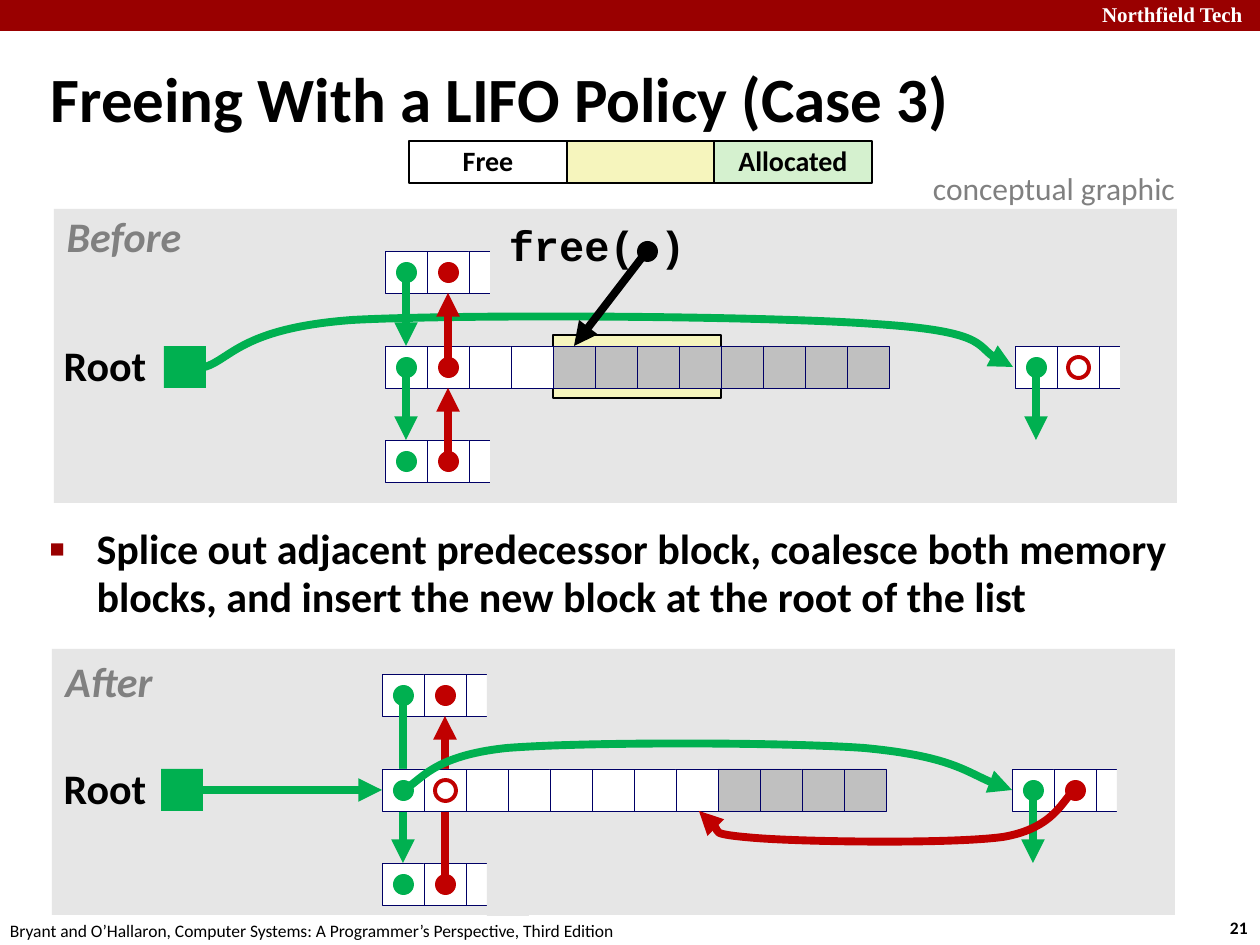
"""Build the slide on freeing with a LIFO policy, case 3."""
from dataclasses import dataclass

import lxml.etree
import pptx
import pptx.dml.color
import pptx.enum.shapes
import pptx.enum.text
import pptx.oxml.ns
import pptx.util

PX = 914400 / 126
CELL, DOT = 42, 21
COLORS = {
    "bar": "990000", "panel": "E6E6E6", "free": "FFFFFF", "used": "C0C0C0",
    "cell_line": "000066", "next": "00B050", "prev": "C00000", "black": "000000",
    "gray": "808080", "yellow": "F6F5BD", "allocated": "D5F1CF",
}
RECT = pptx.enum.shapes.MSO_SHAPE.RECTANGLE
OVAL = pptx.enum.shapes.MSO_SHAPE.OVAL
CENTER = pptx.enum.text.PP_ALIGN.CENTER
LEFT = pptx.enum.text.PP_ALIGN.LEFT
MIDDLE = pptx.enum.text.MSO_ANCHOR.MIDDLE
qn = pptx.oxml.ns.qn


@dataclass
class Box:
    x: int
    y: int
    w: int
    h: int


@dataclass
class Style:
    size: int
    color: str = "black"
    bold: bool = True
    italic: bool = False
    font: str = "Calibri"


@dataclass
class Label:
    text: str
    box: Box
    style: Style
    align: int = LEFT
    spacing: float = 1.0
    margin: int = 13
    wrap: bool = False


def px(n: float) -> int:
    return round(n * PX)


def rgb(name: str):
    return pptx.dml.color.RGBColor.from_string(COLORS[name])


def place(sp, box: Box) -> None:
    sp.left, sp.top, sp.width, sp.height = map(px, (box.x, box.y, box.w, box.h))


def format_text(tf, style: Style, align, spacing: float) -> None:
    p = tf.paragraphs[0]
    p.alignment, p.line_spacing = align, spacing
    f = p.runs[0].font
    f.size, f.name = pptx.util.Pt(style.size), style.font
    f.bold, f.italic = style.bold, style.italic
    f.color.rgb = rgb(style.color)


def add_label(s, label: Label) -> None:
    b = label.box
    tf = s.shapes.add_textbox(px(b.x), px(b.y), px(b.w), px(b.h)).text_frame
    tf.text = label.text
    tf.word_wrap = label.wrap
    tf.auto_size = pptx.enum.text.MSO_AUTO_SIZE.SHAPE_TO_FIT_TEXT
    tf.margin_left = tf.margin_right = px(label.margin)
    tf.margin_top = tf.margin_bottom = px(6)
    format_text(tf, label.style, label.align, label.spacing)


def add_shape(s, kind, box: Box, fill=None, line=None, width: float = 1):
    sp = s.shapes.add_shape(kind, px(box.x), px(box.y), px(box.w), px(box.h))
    sp.shadow.inherit = False
    if fill:
        sp.fill.solid()
        sp.fill.fore_color.rgb = rgb(fill)
    else:
        sp.fill.background()
    if line:
        sp.line.color.rgb = rgb(line)
        sp.line.width = pptx.util.Pt(width)
    else:
        sp.line.fill.background()
    return sp


def add_legend(s, x: int, fill: str, text: str = "") -> None:
    sp = add_shape(s, RECT, Box(x, 141, 158, CELL), fill, "black")
    if text:
        tf = sp.text_frame
        tf.text = text
        tf.word_wrap, tf.vertical_anchor = False, MIDDLE
        format_text(tf, Style(16), CENTER, 0.98)


def add_row(s, x: int, y: int, fills: list) -> list:
    return [add_shape(s, RECT, Box(x + i * CELL, y, CELL, CELL), fill, "cell_line", 0.25)
            for i, fill in enumerate(fills)]


def add_cut_block(s, x: int, y: int) -> list:
    cells = add_row(s, x, y, ["free"] * 3)
    add_shape(s, RECT, Box(x + 105, y - 10, CELL, 63), "panel")
    return cells


def add_dot(s, x: int, y: int, color: str, hollow: bool = False) -> None:
    box = Box(x + 11, y + 11, DOT, DOT)
    if hollow:
        add_shape(s, OVAL, box, None, color, 2.25)
    else:
        add_shape(s, OVAL, box, color)


def style_arrow(sp, color: str) -> None:
    sp.line.color.rgb = rgb(color)
    sp.line.width = pptx.util.Pt(4.5)
    ln = sp.element.spPr.find(qn("a:ln"))
    lxml.etree.SubElement(ln, qn("a:tailEnd"), type="triangle")


def add_arrow(s, start: tuple, end: tuple, color: str, target=None, side: int = 0) -> None:
    c = s.shapes.add_connector(pptx.enum.shapes.MSO_CONNECTOR.STRAIGHT,
                               *map(px, (*start, *end)))
    if target is not None:
        c.end_connect(target, side)
    style_arrow(c, color)
    lxml.etree.SubElement(c.element.spPr, qn("a:effectLst"))


def add_curve(s, points: list, color: str) -> None:
    fb = s.shapes.build_freeform(*points[0], scale=PX)
    fb.add_line_segments(points[1:], close=False)
    sp = fb.convert_to_shape()
    sp.shadow.inherit = False
    sp.fill.background()
    style_arrow(sp, color)
    segments = list(sp.element.iter(qn("a:lnTo")))
    outline = segments[0].getparent()
    for i in range(0, len(segments), 3):
        curve = lxml.etree.SubElement(outline, qn("a:cubicBezTo"))
        for segment in segments[i:i + 3]:
            curve.append(segment[0])
            outline.remove(segment)


def add_placeholders(s) -> None:
    title, body = s.shapes.title, s.placeholders[1]
    place(title, Box(38, 49, 1201, 108))
    place(body, Box(37, 520, 1145, 108))
    title.text_frame.text = "Freeing With a LIFO Policy (Case 3)"
    body.text_frame.text = ("Splice out adjacent predecessor block, coalesce both memory "
                            "blocks, and insert the new block at the root of the list")
    for sp, size, spacing in ((title, 36, 0.87), (body, 24, 0.95)):
        sp.text_frame.auto_size = pptx.enum.text.MSO_AUTO_SIZE.NONE
        format_text(sp.text_frame, Style(size), LEFT, spacing)
    title.text_frame.vertical_anchor = MIDDLE
    pPr = body.text_frame.paragraphs[0]._p.get_or_add_pPr()
    pPr.set("marL", str(px(47)))
    pPr.set("indent", str(-px(47)))
    clr = lxml.etree.SubElement(pPr, qn("a:buClr"))
    lxml.etree.SubElement(clr, qn("a:srgbClr"), val=COLORS["bar"])
    lxml.etree.SubElement(pPr, qn("a:buSzPct"), val="60000")
    lxml.etree.SubElement(pPr, qn("a:buChar"), char="■")


def add_before(s) -> None:
    x, right, top, mid, low = 385, 1015, 251, 346, 440
    add_shape(s, RECT, Box(54, 209, 1123, 294), "panel")
    add_shape(s, RECT, Box(553, 335, 168, 63), "yellow", "black", 0.75)
    add_curve(s, [(205, 367), (231, 359), (242, 328), (353, 320), (465, 314), (764, 316),
                  (874, 324), (984, 331), (984, 358), (1013, 367)], "next")
    row = add_row(s, x, mid, ["free"] * 4 + ["used"] * 8)
    upper, lower = add_cut_block(s, x, top), add_cut_block(s, x, low)
    add_cut_block(s, right, mid)
    add_shape(s, RECT, Box(164, mid, CELL, CELL), "next")
    for y in (top, mid, low):
        add_dot(s, x, y, "next")
        add_dot(s, x + CELL, y, "prev")
    for y, cells in ((top, row), (mid, lower)):
        add_arrow(s, (x + 21, y + 21), (x + 21, y + 95), "next", cells[0], 0)
    for y, cells in ((low, row), (mid, upper)):
        add_arrow(s, (x + 63, y + 21), (x + 63, y - 53), "prev", cells[1], 2)
    add_dot(s, right, mid, "next")
    add_arrow(s, (right + 21, mid + 21), (right + 21, low), "next")
    add_dot(s, right + CELL, mid, "prev", hollow=True)
    add_label(s, Label("free( )", Box(502, 219, 190, 59),
                       Style(24, font="Courier New"), CENTER, 0.9, 6))
    add_dot(s, 626, 230, "black")
    add_arrow(s, (647, 251), (574, mid), "black", row[4], 0)


def add_after(s) -> None:
    x, right, top, mid, low = 382, 1012, 674, 769, 863
    add_shape(s, RECT, Box(52, 649, 1123, 266), "panel")
    upper, lower = add_cut_block(s, x, top), add_cut_block(s, x, low)
    add_arrow(s, (x + 63, low + 21), (x + 63, top + CELL), "prev", upper[1], 2)
    add_arrow(s, (x + 21, top + 21), (x + 21, low), "next", lower[0], 0)
    row = add_row(s, x, mid, ["free"] * 8 + ["used"] * 4)
    add_shape(s, RECT, Box(161, mid, CELL, CELL), "next")
    add_cut_block(s, right, mid)
    for y in (top, mid, low):
        add_dot(s, x, y, "next")
        add_dot(s, x + CELL, y, "prev", hollow=y == mid)
    add_dot(s, right, mid, "next")
    add_arrow(s, (right + 21, mid + 21), (right + 21, low), "next")
    add_dot(s, right + CELL, mid, "prev")
    add_arrow(s, (193, mid + 21), (x, mid + 21), "next", row[0], 1)
    add_curve(s, [(403, 790), (421, 782), (430, 756), (507, 748), (583, 742), (780, 742),
                  (864, 748), (949, 756), (981, 781), (1012, 790)], "next")
    add_curve(s, [(1075, 790), (1063, 798), (1056, 828), (1003, 837), (950, 844), (806, 842),
                  (756, 838), (706, 834), (711, 818), (699, 811)], "prev")


def main() -> None:
    prs = pptx.Presentation()
    prs.slide_width, prs.slide_height = px(1260), px(945)
    s = prs.slides.add_slide(prs.slide_layouts[1])
    add_shape(s, RECT, Box(0, 0, 1260, 31), "bar")
    add_placeholders(s)
    add_before(s)
    add_after(s)
    stage = Style(24, "gray", italic=True)
    for label in (
        Label("Northfield Tech", Box(1089, -4, 180, 38),
              Style(12, "free", font="Times New Roman"), wrap=True),
        Label("21", Box(1217, 911, 47, 34), Style(10)),
        Label("Bryant and O’Hallaron, Computer Systems: A Programmer’s Perspective, "
              "Third Edition", Box(-3, 914, 640, 34), Style(10, bold=False)),
        Label("Root", Box(57, 339, 96, 59), Style(24), CENTER, 0.9, 6),
        Label("Root", Box(57, 762, 96, 59), Style(24), CENTER, 0.9, 6),
        Label("Before", Box(59, 210, 130, 59), stage, CENTER, 0.9, 6),
        Label("After", Box(58, 655, 102, 59), stage, CENTER, 0.9, 6),
        Label("conceptual graphic", Box(920, 163, 273, 50), Style(18, "gray", bold=False)),
    ):
        add_label(s, label)
    add_legend(s, 558, "yellow")
    add_legend(s, 714, "allocated", "Allocated")
    add_legend(s, 409, "free", "Free")
    prs.save("out.pptx")


if __name__ == "__main__":
    main()
